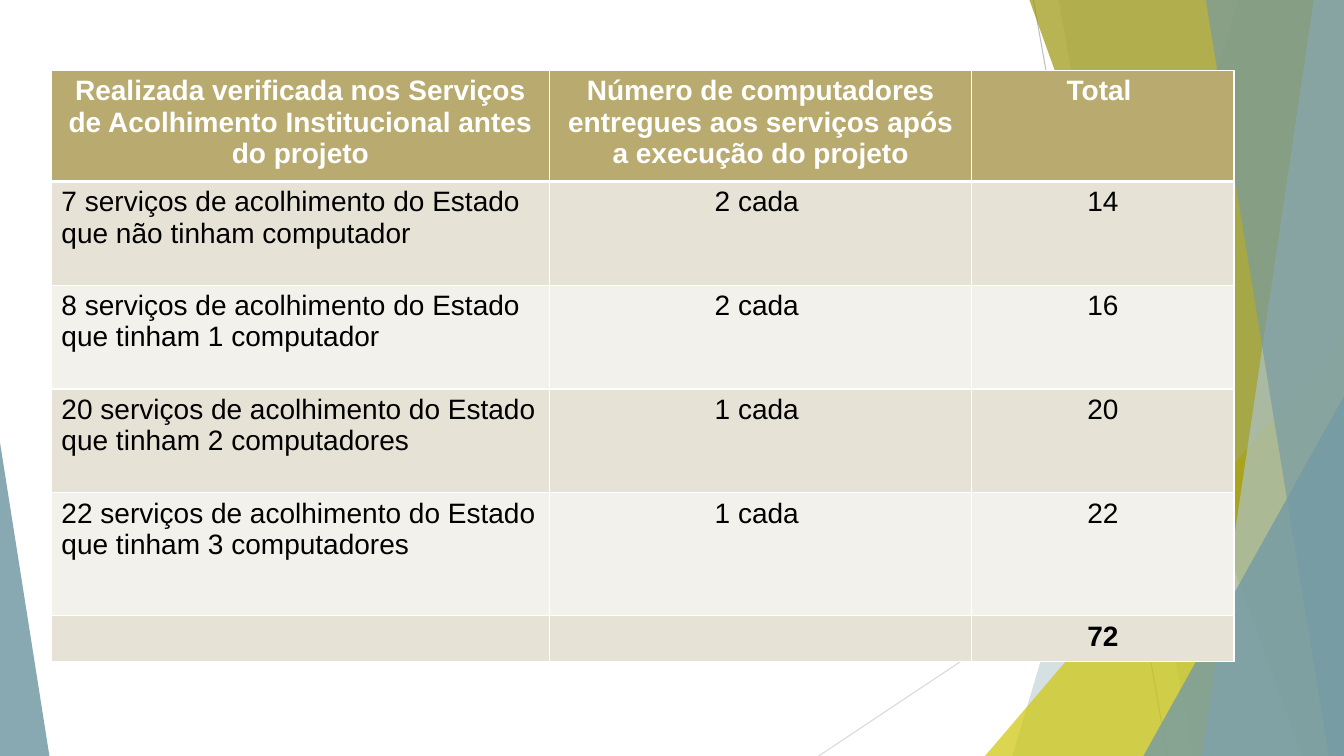
from lxml import etree
from pptx import Presentation, util as u
from pptx.dml.color import RGBColor
from pptx.enum import shapes, text
from pptx.oxml import ns

COLORS = {
    "teal": "759AA5", "mist": "ACC2C9", "lime": "CFC60D", "olive": "9B950A",
    "grey": "BFBFBF", "silver": "D9D9D9", "white": "FFFFFF", "black": "000000",
    "header": "B9AB6F", "band": "E6E2D5", "light": "F3F1EB",
}
WIDTH, HEIGHT = 13.33, 7.5
ROWS = [
    ("Realizada verificada nos Serviços de Acolhimento Institucional antes do projeto",
     "Número de computadores entregues aos serviços após a execução do projeto", "Total "),
    ("7 serviços de acolhimento do Estado que não tinham computador", "2 cada ", "14"),
    ("8 serviços de acolhimento do Estado que tinham 1 computador", "2 cada ", "16"),
    ("20 serviços de acolhimento do Estado que tinham 2 computadores", "1 cada ", "20"),
    ("22 serviços de acolhimento do Estado que tinham 3 computadores", "1 cada ", "22"),
    ("", "", "72"),
]
TABLE_LEFT, TABLE_TOP = 0.51, 0.7
COLUMN_WIDTHS = [4.94, 4.19, 2.6]
ROW_HEIGHTS = [1.1, 1.03, 1.03, 1.03, 1.22, 0.45]
LINES = [
    ((10.25, 0), (11.58, HEIGHT), "grey"),
    ((WIDTH, 4.03), (8.12, HEIGHT), "silver"),
]
# Each panel runs from its top x and bottom x to the right edge.
PANELS_BEHIND = [(12.28, 10.04, "teal", 30), (10.5, 11.83, "teal", 20)]
PANELS_FRONT = [(10.21, 12.91, "olive", 70), (13.03, 11.92, "mist", 70),
                (11.96, 13.18, "teal", 65)]
LIME_TRIANGLE = (9.77, 3.33, 3.56, 1, "lime", 72)
CORNER_TRIANGLES = [(11.34, 3.93, 1.99, 1, "teal", 80), (0, 4.39, 0.49, 0, "teal", 85)]


def rgb(name):
    return RGBColor.from_string(COLORS[name])


def paint(shape, color, opacity):
    shape.shadow.inherit = False
    shape.fill.solid()
    shape.fill.fore_color.rgb = rgb(color)
    shape.line.fill.background()
    fill_color = shape._element.spPr.find(".//" + ns.qn("a:srgbClr"))
    etree.SubElement(fill_color, ns.qn("a:alpha"), val=str(opacity * 1000))


def add_line(slide, start, end, color):
    points = [u.Inches(value) for value in start + end]
    line = slide.shapes.add_connector(shapes.MSO_CONNECTOR.STRAIGHT, *points)
    line.line.color.rgb = rgb(color)
    line.line.width = u.Pt(0.75)
    etree.SubElement(line._element.spPr, ns.qn("a:effectLst"))


def add_panel(slide, top_x, bottom_x, color, opacity):
    corners = [(top_x, 0), (WIDTH, 0), (WIDTH, HEIGHT), (bottom_x, HEIGHT)]
    points = [(u.Inches(x), u.Inches(y)) for x, y in corners]
    builder = slide.shapes.build_freeform(*points[0])
    builder.add_line_segments(points[1:], close=True)
    paint(builder.convert_to_shape(), color, opacity)


def add_triangle(slide, left, top, width, apex, color, opacity):
    box = [u.Inches(value) for value in (left, top, width, HEIGHT - top)]
    triangle = slide.shapes.add_shape(shapes.MSO_SHAPE.ISOSCELES_TRIANGLE, *box)
    triangle.adjustments[0] = apex
    paint(triangle, color, opacity)


def add_borders(cell, row):
    properties = cell._tc.get_or_add_tcPr()
    widths = {"lnL": 1, "lnR": 1, "lnT": 3 if row == 1 else 1, "lnB": 3 if row == 0 else 1}
    for position, (side, width) in enumerate(widths.items()):
        border = etree.Element(ns.qn("a:" + side), w=str(u.Pt(width)))
        fill = etree.SubElement(border, ns.qn("a:solidFill"))
        etree.SubElement(fill, ns.qn("a:srgbClr"), val=COLORS["white"])
        properties.insert(position, border)


def fill_cell(cell, content, row, column):
    is_header = row == 0
    cell.fill.solid()
    cell.fill.fore_color.rgb = rgb("header" if is_header else "band" if row % 2 else "light")
    add_borders(cell, row)
    if not content:
        return
    paragraph = cell.text_frame.paragraphs[0]
    is_left = column == 0 and not is_header
    paragraph.alignment = text.PP_ALIGN.LEFT if is_left else text.PP_ALIGN.CENTER
    run = paragraph.add_run()
    run.text = content
    font_format = {"name": "Arial", "size": u.Pt(20),
                   "bold": is_header or row == len(ROWS) - 1}
    for name, value in font_format.items():
        setattr(run.font, name, value)
    run.font.color.rgb = rgb("white" if is_header else "black")


def add_service_table(slide):
    box = [u.Inches(value) for value in
           (TABLE_LEFT, TABLE_TOP, sum(COLUMN_WIDTHS), sum(ROW_HEIGHTS))]
    table = slide.shapes.add_table(len(ROWS), len(COLUMN_WIDTHS), *box).table
    table.first_row = table.horz_banding = False
    for column, width in zip(table.columns, COLUMN_WIDTHS):
        column.width = u.Inches(width)
    for row, height in zip(table.rows, ROW_HEIGHTS):
        row.height = u.Inches(height)
    for row, contents in enumerate(ROWS):
        for column, content in enumerate(contents):
            fill_cell(table.cell(row, column), content, row, column)


def main():
    presentation = Presentation()
    presentation.slide_width = u.Inches(WIDTH)
    presentation.slide_height = u.Inches(HEIGHT)
    slide = presentation.slides.add_slide(presentation.slide_layouts[6])
    for line in LINES:
        add_line(slide, *line)
    for panel in PANELS_BEHIND:
        add_panel(slide, *panel)
    add_triangle(slide, *LIME_TRIANGLE)
    for panel in PANELS_FRONT:
        add_panel(slide, *panel)
    for triangle in CORNER_TRIANGLES:
        add_triangle(slide, *triangle)
    add_service_table(slide)
    presentation.save("out.pptx")


if __name__ == "__main__":
    main()
